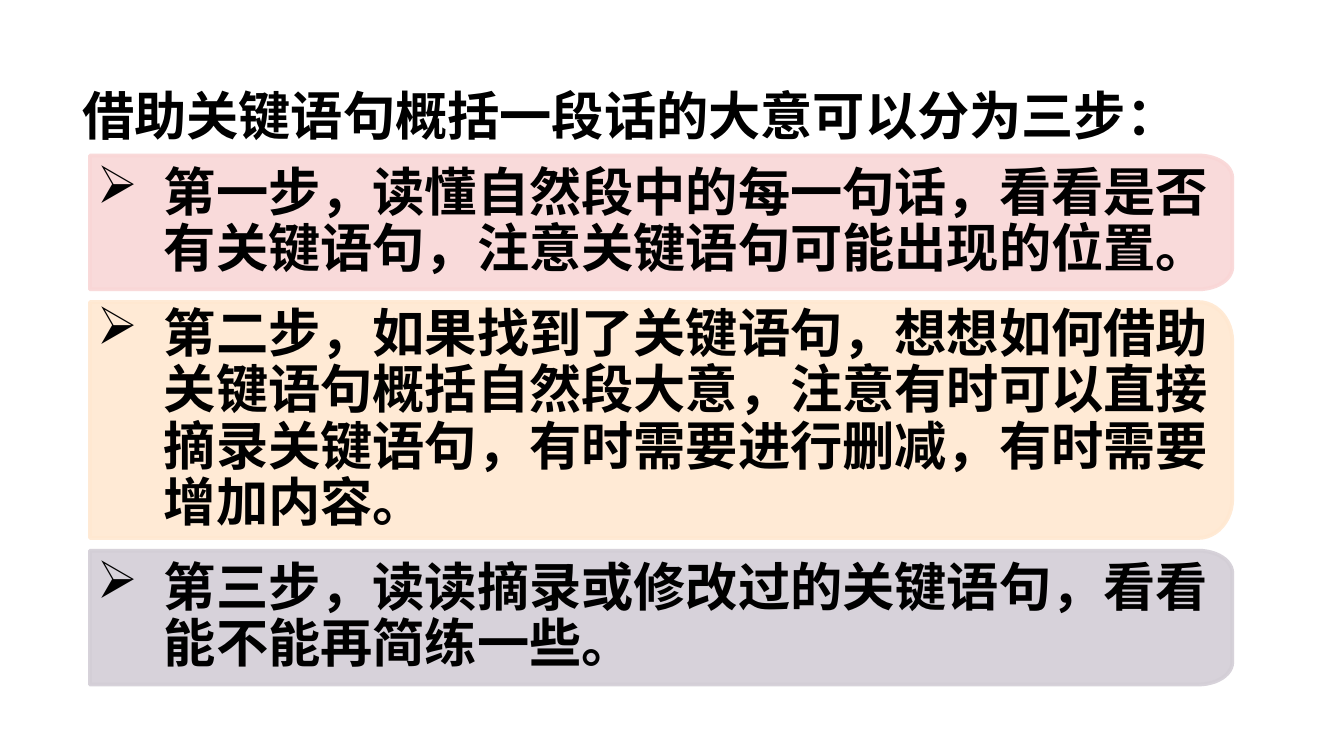
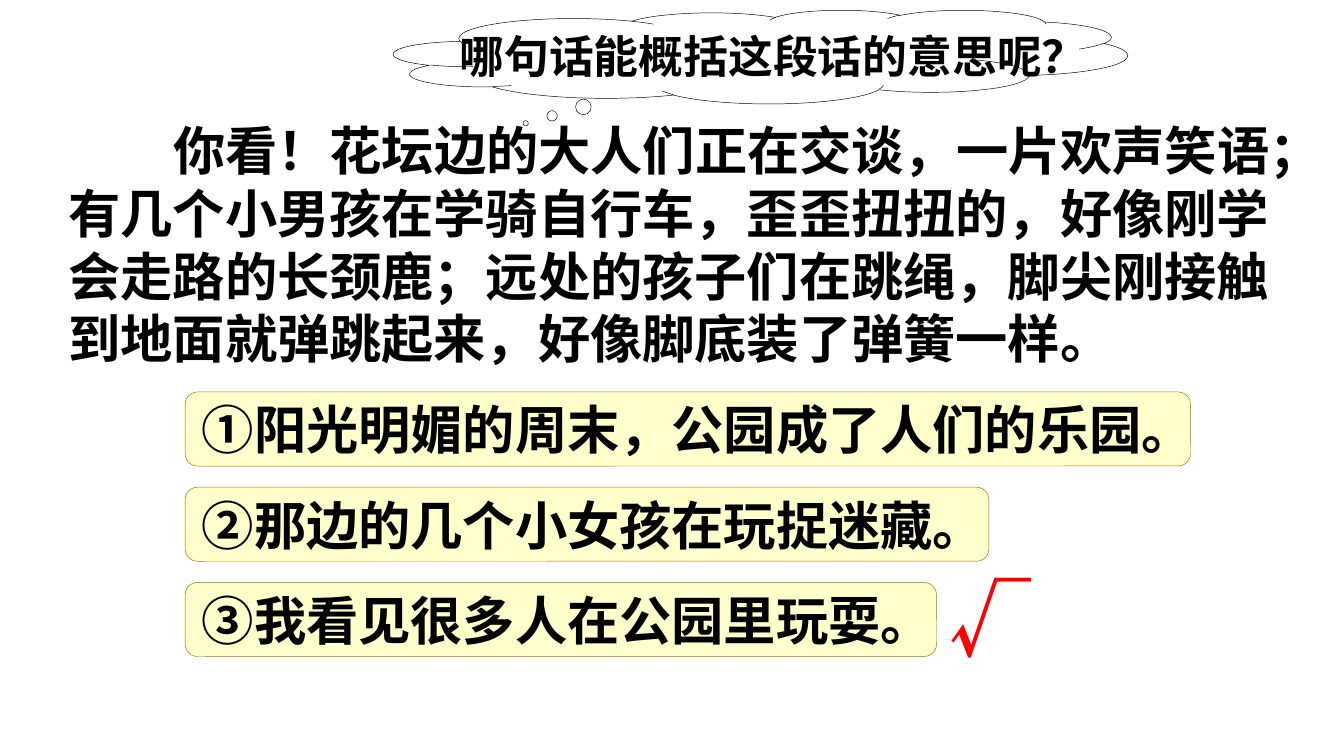
from math import cos, pi, sin

from lxml.etree import SubElement
from pptx import Presentation
from pptx.dml.color import RGBColor
from pptx.enum.shapes import MSO_SHAPE as Preset
from pptx.enum.text import MSO_ANCHOR as Anchor, MSO_AUTO_SIZE as AutoSize, PP_ALIGN as Align
from pptx.oxml.ns import qn
from pptx.util import Cm, Pt

FONT = "Noto Sans CJK SC"
BLACK, WHITE, RED = "000000", "FFFFFF", "FF0000"
OPTION_FILL, OPTION_LINE = "FFFFCC", "A96A00"

STEPS_TITLE = "借助关键语句概括一段话的大意可以分为三步："
STEPS = [
    ("第一步，读懂自然段中的每一句话，看看是否有关键语句，注意关键语句可能出现的位置。", "F9D6D6", 2.53),
    ("第二步，如果找到了关键语句，想想如何借助关键语句概括自然段大意，"
     "注意有时可以直接摘录关键语句，有时需要进行删减，有时需要增加内容。", "FFE8D1", 4.46),
    ("第三步，读读摘录或修改过的关键语句，看看能不能再简练一些。", "D3CED6", 2.53),
]
STEP_LEFT, STEP_TOP, STEP_WIDTH, STEP_GAP = 1.7, 2.94, 21.59, 0.24

QUESTION = "哪句话能概括这段话的意思呢？"
PASSAGE = ("你看！花坛边的大人们正在交谈，一片欢声笑语；有几个小男孩在学骑自行车，歪歪扭扭的，"
           "好像刚学会走路的长颈鹿；远处的孩子们在跳绳，脚尖刚接触到地面就弹跳起来，好像脚底装了弹簧一样。")
OPTIONS = [
    ("①阳光明媚的周末，公园成了人们的乐园。", 19),
    ("②那边的几个小女孩在玩捉迷藏。", 15.19),
    ("③我看见很多人在公园里玩耍。", 14.2),
]
OPTION_LEFT, OPTION_TOP, OPTION_HEIGHT, OPTION_PITCH = 3.5, 7.41, 1.4, 1.8
CHECK = "√"


def color(hex_code):
    return RGBColor.from_string(hex_code)


def place(shape, left, top, width, height):
    shape.left, shape.top, shape.width, shape.height = map(Cm, (left, top, width, height))


def paint(shape, fill, line, width):
    shape.shadow.inherit = False
    shape.fill.solid()
    shape.fill.fore_color.rgb = color(fill)
    shape.line.color.rgb = color(line)
    shape.line.width = Pt(width)


def write(shape, text, size=28, ink=BLACK, align=Align.LEFT, anchor=Anchor.MIDDLE,
          spacing=1.0, margin=0, indent=0, bullet=None, wrap=True):
    frame = shape.text_frame
    frame.text = text
    frame.word_wrap = wrap
    frame.auto_size = AutoSize.NONE
    frame.vertical_anchor = anchor
    paragraph = frame.paragraphs[0]
    properties = paragraph._p.get_or_add_pPr()
    properties.set("marL", str(Cm(margin)))
    properties.set("indent", str(Cm(indent)))
    if bullet:
        SubElement(properties, qn("a:buChar")).set("char", bullet)
    else:
        SubElement(properties, qn("a:buNone"))
    paragraph.alignment = align
    paragraph.line_spacing = spacing
    paragraph.space_before = Pt(0)
    for run in paragraph.runs:
        run.font.size = Pt(size)
        run.font.bold = True
        run.font.color.rgb = color(ink)
        run.font.name = FONT
        SubElement(run._r.get_or_add_rPr(), qn("a:ea")).set("typeface", FONT)


def add_step(slide, text, tint, top, height):
    radius_x, radius_y = 0.64, height / 6
    right, bottom = STEP_LEFT + STEP_WIDTH, top + height
    corners = [(top + radius_y, -pi / 2), (bottom - radius_y, 0)]
    outline = [
        (right - radius_x + radius_x * cos(start + pi / 2 * i / 12),
         center_y + radius_y * sin(start + pi / 2 * i / 12))
        for center_y, start in corners for i in range(13)
    ]
    outline.append((STEP_LEFT, bottom))
    builder = slide.shapes.build_freeform(Cm(STEP_LEFT), Cm(top))
    builder.add_line_segments([(Cm(x), Cm(y)) for x, y in outline], close=True)
    step = builder.convert_to_shape()
    paint(step, tint, tint, 2)
    for tone in step.element.spPr.iter(qn("a:srgbClr")):
        SubElement(tone, qn("a:alpha")).set("val", "90000")
    write(step, text, spacing=0.9, margin=1.27, indent=-1.27, bullet="➢")
    frame = step.text_frame
    frame.margin_left, frame.margin_right = Cm(0.13), Cm(0.25)
    frame.margin_top = frame.margin_bottom = Cm(0.18)


def build_steps(deck):
    slide = deck.slides.add_slide(deck.slide_layouts[5])
    title = slide.shapes.title
    place(title, 1.3, 1.35, 21.41, 1.4)
    write(title, STEPS_TITLE, spacing=1.2)
    top = STEP_TOP
    for text, tint, height in STEPS:
        add_step(slide, text, tint, top, height)
        top += height + STEP_GAP


def build_question(deck):
    slide = deck.slides.add_slide(deck.slide_layouts[1])
    question, passage = slide.shapes.title, slide.placeholders[1]
    place(passage, 1.04, 2.11, 23.4, 5.05)
    write(passage, PASSAGE, anchor=Anchor.TOP, indent=1.98)

    for row, (text, width) in enumerate(OPTIONS):
        option = slide.shapes.add_shape(
            Preset.ROUNDED_RECTANGLE, Cm(OPTION_LEFT), Cm(OPTION_TOP + row * OPTION_PITCH),
            Cm(width), Cm(OPTION_HEIGHT))
        paint(option, OPTION_FILL, OPTION_LINE, 0.25)
        write(option, text)

    check = slide.shapes.add_textbox(Cm(17.7), Cm(10.62), Cm(2.08), Cm(2.13))
    write(check, CHECK, size=44, ink=RED, anchor=Anchor.TOP, wrap=False)

    cloud = slide.shapes.add_shape(Preset.CLOUD_CALLOUT, Cm(7.44), Cm(0.19), Cm(13.87), Cm(1.77))
    cloud.adjustments[0], cloud.adjustments[1] = -0.32, 0.71
    paint(cloud, WHITE, BLACK, 0.25)
    cloud.element.addnext(question.element)
    place(question, 8.36, 0.41, 12.5, 1.27)
    write(question, QUESTION, size=24, align=Align.CENTER, anchor=Anchor.TOP)


def main():
    deck = Presentation()
    deck.slide_width, deck.slide_height = Cm(25.4), Cm(14.29)
    build_steps(deck)
    build_question(deck)
    deck.save("out.pptx")


if __name__ == "__main__":
    main()
